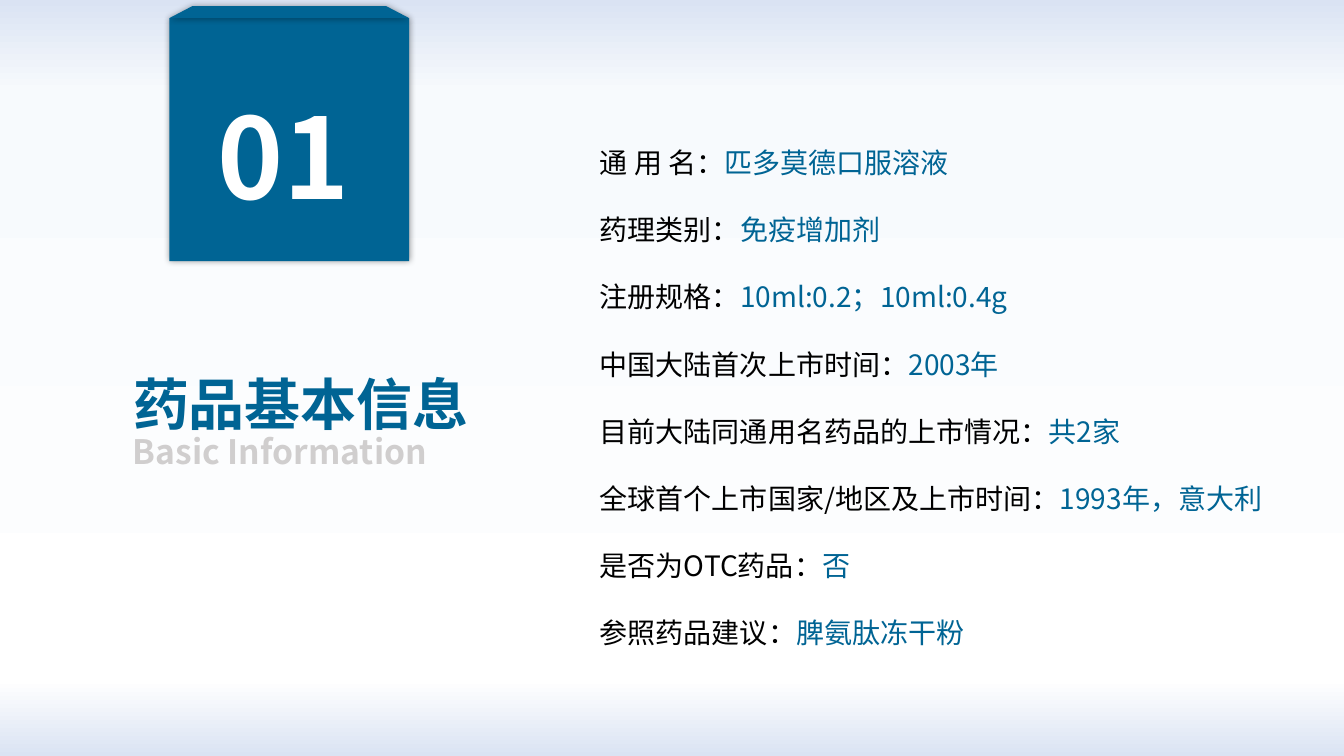
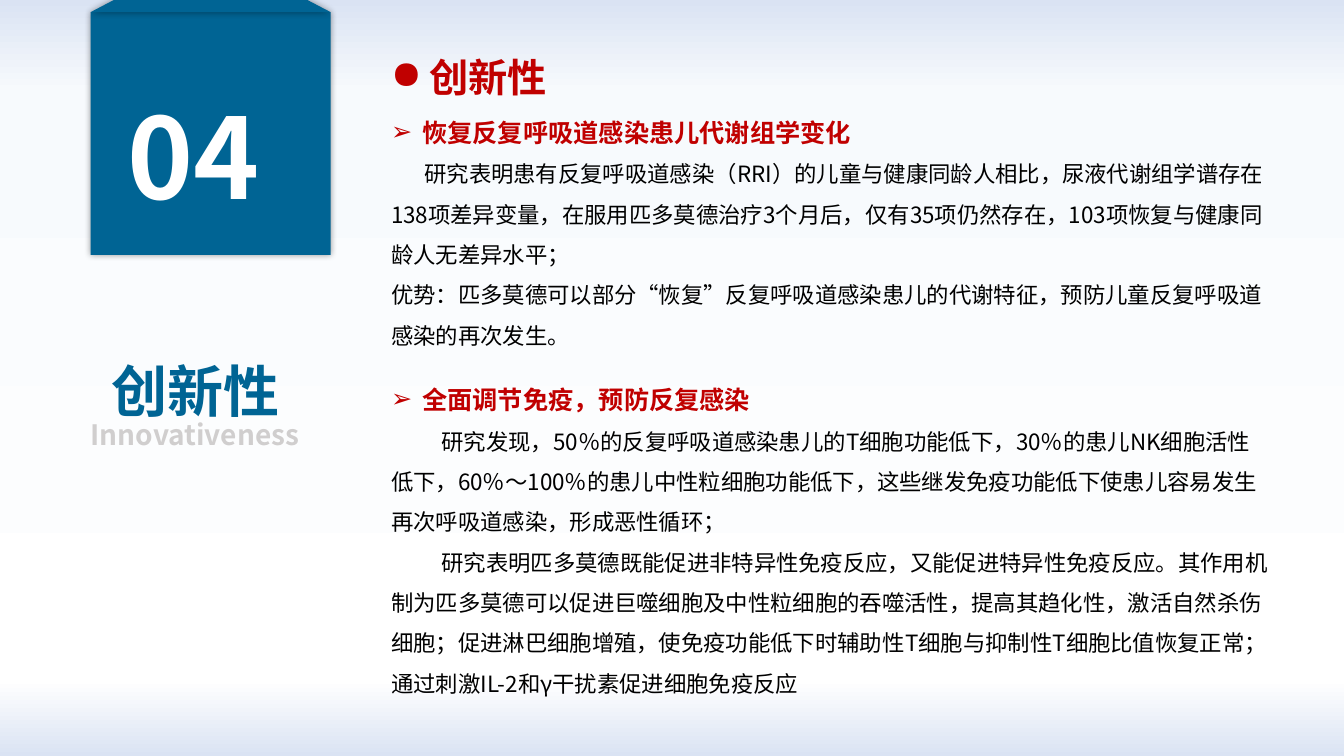
"""Build two numbered section slides on a 40 by 30 grid."""
from lxml import etree
from pptx import Presentation
from pptx.dml.color import RGBColor
from pptx.enum.shapes import MSO_SHAPE
from pptx.enum.text import MSO_ANCHOR, MSO_AUTO_SIZE, PP_ALIGN
from pptx.oxml.ns import qn
from pptx.util import Inches, Pt

RECT = MSO_SHAPE.RECTANGLE
TOP = MSO_ANCHOR.TOP
FIXED = MSO_AUTO_SIZE.NONE
LEFT, MID = PP_ALIGN.LEFT, PP_ALIGN.CENTER

WIDE, HIGH = Inches(13.33), Inches(7.5)
COL, ROW = WIDE / 40, HIGH / 30
FONT = "Noto Sans CJK SC"
HEX = {"blue": "006494", "white": "FFFFFF", "black": "000000",
       "gray": "D0CECE", "red": "C00000"}
SKY = [(0, "DAE3F3"), (12, "F7FAFD"), (90, "FFFFFF"), (100, "DAE3F3")]
BADGE_W, BADGE_H, FLAP_H, INSET = 7.14, 9.64, 0.48, 0.69

FACTS = [
    ("通 用 名：", "匹多莫德口服溶液"),
    ("药理类别：", "免疫增加剂"),
    ("注册规格：", "10ml:0.2；10ml:0.4g"),
    ("中国大陆首次上市时间：", "2003年"),
    ("目前大陆同通用名药品的上市情况：", "共2家"),
    ("全球首个上市国家/地区及上市时间：", "1993年，意大利"),
    ("是否为OTC药品：", "否"),
    ("参照药品建议：", "脾氨肽冻干粉"),
]
CLAIMS = [
    (3.84, 10.12, "恢复反复呼吸道感染患儿代谢组学变化", [
        (0.33, "研究表明患有反复呼吸道感染（RRI）的儿童与健康同龄人相比，尿液代谢组学谱存在138项差异变量，在服用匹多莫德治疗3个月后，仅有35项仍然存在，103项恢复与健康同龄人无差异水平；"),
        (0, "优势：匹多莫德可以部分“恢复”反复呼吸道感染患儿的代谢特征，预防儿童反复呼吸道感染的再次发生。"),
    ]),
    (14.44, 13.36, "全面调节免疫，预防反复感染", [
        (0.5, "研究发现，50％的反复呼吸道感染患儿的T细胞功能低下，30％的患儿NK细胞活性低下，60％～100％的患儿中性粒细胞功能低下，这些继发免疫功能低下使患儿容易发生再次呼吸道感染，形成恶性循环；"),
        (0.5, "研究表明匹多莫德既能促进非特异性免疫反应，又能促进特异性免疫反应。其作用机制为匹多莫德可以促进巨噬细胞及中性粒细胞的吞噬活性，提高其趋化性，激活自然杀伤细胞；促进淋巴细胞增殖，使免疫功能低下时辅助性T细胞与抑制性T细胞比值恢复正常；通过刺激IL-2和γ干扰素促进细胞免疫反应"),
    ]),
]


def cell(x, y, w, h):
    """Turn grid columns and rows into lengths."""
    return [round(n) for n in (x * COL, y * ROW, w * COL, h * ROW)]


def node(home, tag, **attrs):
    """Add one XML element."""
    return etree.SubElement(home, qn(tag), attrs)


def sky(master):
    """Give every slide the same gradient background."""
    master.background.fill.gradient()
    stops = master.element.find(".//" + qn("a:gsLst"))
    for stop in list(stops):
        stops.remove(stop)
    for pos, tone in SKY:
        stop = node(stops, "a:gs", pos=str(pos * 1000))
        node(stop, "a:srgbClr", val=tone)
    stops.getparent().find(qn("a:lin")).set("ang", "5400000")


def place(shape, *area):
    """Move a text shape onto the grid and return its empty frame."""
    shape.left, shape.top, shape.width, shape.height = cell(*area)
    frame = shape.text_frame
    frame.word_wrap, frame.auto_size = True, FIXED
    frame.vertical_anchor = TOP
    return frame


def label(slide, *area):
    """Add a text box on the grid and return its frame."""
    return place(slide.shapes.add_textbox(*cell(*area)), *area)


def write(frame, *texts, size, tones, bold=False, lines=1.5,
          align=LEFT, mark=None, hang=0, first=0):
    """Write one paragraph, with one run for each text and tone."""
    para = frame.paragraphs[0]
    if para.runs:
        para = frame.add_paragraph()
    props = para._p.get_or_add_pPr()
    props.set("marL", str(Inches(hang)))
    props.set("indent", str(Inches(first - hang)))
    if mark:
        node(props, "a:buChar", char=mark)
    else:
        node(props, "a:buNone")
    para.alignment = align
    para.line_spacing = Pt(size * 1.2 * lines)
    para.space_before = para.space_after = Pt(0)
    for text, tone in zip(texts, tones):
        run = para.add_run()
        run.text = text
        font = run.font
        font.size, font.bold, font.name = Pt(size), bold, FONT
        font.color.rgb = RGBColor.from_string(HEX[tone])
        node(run._r.get_or_add_rPr(), "a:ea", typeface=FONT)


def paint(shape):
    """Fill a badge part and give it a soft shadow."""
    shape.fill.solid()
    shape.fill.fore_color.rgb = RGBColor.from_string(HEX["blue"])
    shape.line.fill.background()
    shape.shadow.inherit = False
    glow = node(shape._element.spPr.find(qn("a:effectLst")), "a:outerShdw",
                blurRad=str(Pt(5)), dist="0", dir="0", algn="ctr",
                rotWithShape="0")
    tone = node(glow, "a:srgbClr", val=HEX["black"])
    node(tone, "a:alpha", val="40000")


def badge(slide, num, x, y, shift):
    """Draw the folded tag with its section number."""
    paint(slide.shapes.add_shape(RECT, *cell(x, y, BADGE_W, BADGE_H)))
    ends = [(x + BADGE_W - INSET, y - FLAP_H), (x + BADGE_W, y), (x, y)]
    pen = slide.shapes.build_freeform(*cell(x + INSET, y - FLAP_H, 0, 0)[:2])
    pen.add_line_segments([cell(*end, 0, 0)[:2] for end in ends], close=True)
    paint(pen.convert_to_shape())
    frame = label(slide, x + shift, 3.28, 4.89, 5.8)
    write(frame, num, size=80, tones=["white"], bold=True, lines=1)


def names(slide, title, area, sub, spot, size, align=LEFT):
    """Write the section title and its English name."""
    write(place(slide.shapes.title, *area), title, size=40,
          tones=["blue"], bold=True, align=align)
    write(label(slide, *spot), sub, size=size, tones=["gray"], bold=True)


def basics(deck):
    """Build the slide of basic facts."""
    slide = deck.slides.add_slide(deck.slide_layouts[1])
    badge(slide, "01", 5.04, 0.72, 1.14)
    names(slide, "药品基本信息", (2.22, 13.12, 13.47, 3.96),
          "Basic Information", (3.66, 16.1, 10.35, 2.56), 24, MID)
    frame = place(slide.placeholders[1], 17.55, 4.24, 21.03, 21.52)
    for fact in FACTS:
        write(frame, *fact, size=20, tones=["black", "blue"], lines=2)


def novelty(deck):
    """Build the slide of claims."""
    slide = deck.slides.add_slide(deck.slide_layouts[3])
    badge(slide, "04", 2.7, 0.48, 0.81)
    names(slide, "创新性", (3.03, 12.6, 6.48, 3.96),
          "Innovativeness", (2.4, 15.7, 8.28, 2.2), 20)
    write(label(slide, 11.34, 1, 26.82, 2.88), "创新性", size=28,
          tones=["red"], bold=True, mark="●", hang=0.38)
    for spot, (y, h, head, notes) in enumerate(CLAIMS, 1):
        frame = place(slide.placeholders[spot], 11.34, y, 26.82, h)
        write(frame, head, size=18, tones=["red"], bold=True,
              mark="➢", hang=0.31)
        for first, note in notes:
            write(frame, note, size=16, tones=["black"], first=first)


def main():
    """Build and save the deck."""
    deck = Presentation()
    deck.slide_width, deck.slide_height = WIDE, HIGH
    sky(deck.slide_master)
    basics(deck)
    novelty(deck)
    deck.save("out.pptx")


if __name__ == "__main__":
    main()
